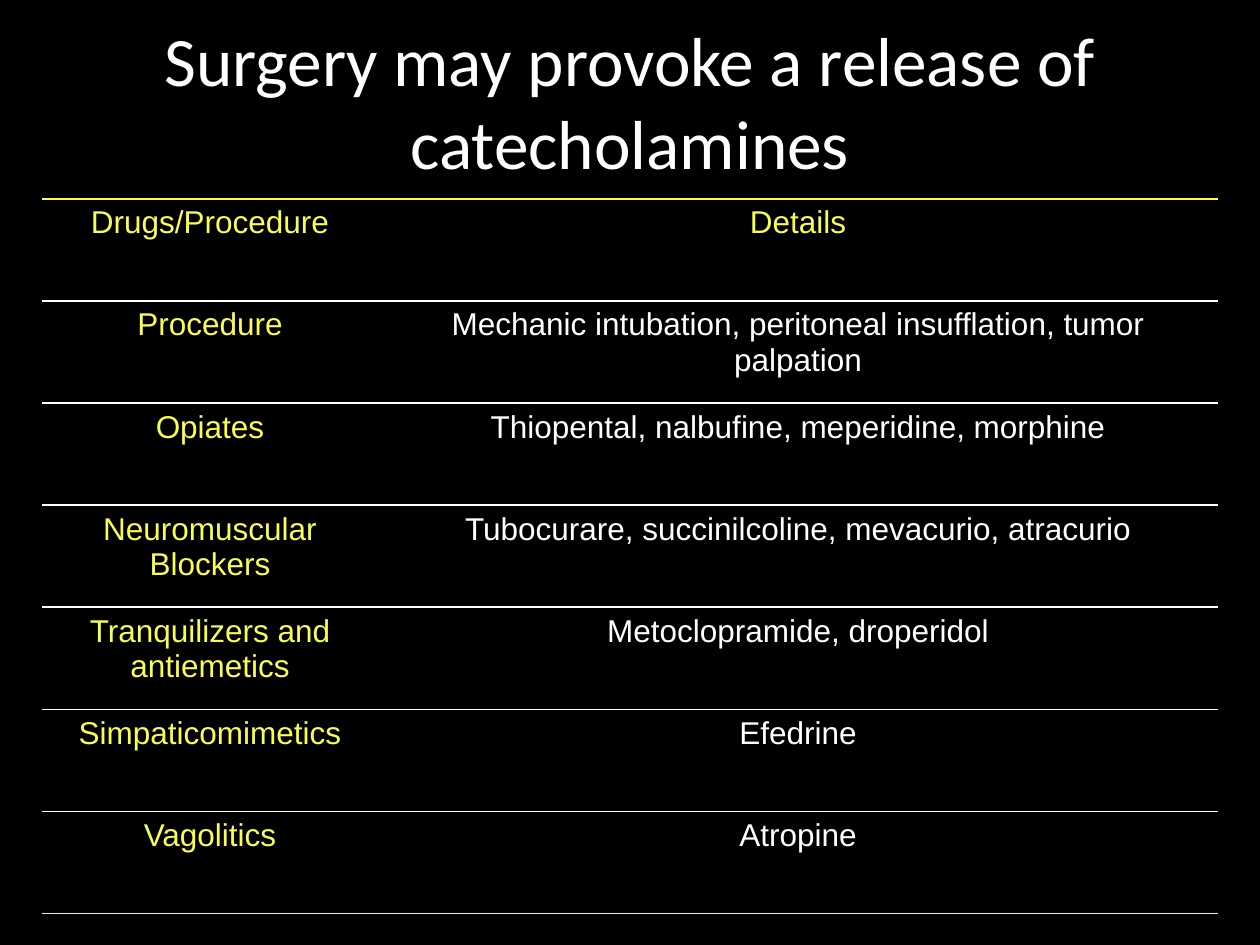
from lxml.etree import SubElement
from pptx import Presentation
from pptx.dml.color import RGBColor
from pptx.enum.text import MSO_ANCHOR, PP_ALIGN
from pptx.oxml import parse_xml
from pptx.oxml.ns import nsdecls, qn
from pptx.util import Inches, Pt

BLACK = RGBColor(0x00, 0x00, 0x00)
WHITE = RGBColor(0xFF, 0xFF, 0xFF)
YELLOW = RGBColor(0xF9, 0xFD, 0x51)

WIDTH, HEIGHT = Inches(10), Inches(7.5)
MARGIN = WIDTH / 30
TABLE_TOP = Inches(1.58)
ROW_HEIGHT = Inches(0.81)
COLUMN_SHARES = (2 / 7, 5 / 7)

ROWS = [
    ("Drugs/Procedure", "Details"),
    ("Procedure", "Mechanic intubation, peritoneal insufflation, tumor palpation"),
    ("Opiates", "Thiopental, nalbufine, meperidine, morphine"),
    ("Neuromuscular Blockers", "Tubocurare, succinilcoline, mevacurio, atracurio"),
    ("Tranquilizers and antiemetics", "Metoclopramide, droperidol"),
    ("Simpaticomimetics", "Efedrine"),
    ("Vagolitics", "Atropine"),
]


def format_paragraph(p, font, size, color):
    p.alignment = PP_ALIGN.CENTER
    p.font.name = font
    p.font.size = Pt(size)
    p.font.color.rgb = color


def add_title(s, text):
    title = s.shapes.title
    title.left, title.top = Inches(0.5), Inches(0.17)
    title.width, title.height = Inches(9), Inches(1.25)
    tf = title.text_frame
    tf.text = text
    tf.word_wrap = True
    tf.vertical_anchor = MSO_ANCHOR.MIDDLE
    format_paragraph(tf.paragraphs[0], "Calibri", 39.6, WHITE)


def set_borders(cell, top, bottom):
    """Rule the cell above and below, and leave its sides open."""
    tcPr = cell._tc.get_or_add_tcPr()
    for side, color in (("L", None), ("R", None), ("T", top), ("B", bottom)):
        ln = SubElement(tcPr, qn(f"a:ln{side}"), w=str(Pt(1)))
        if color is None:
            SubElement(ln, qn("a:noFill"))
        else:
            fill = SubElement(ln, qn("a:solidFill"))
            SubElement(fill, qn("a:srgbClr"), val=str(color))


def fill_cell(cell, text, color):
    cell.text = text
    cell.fill.background()
    p = cell.text_frame.paragraphs[0]
    format_paragraph(p, "Arial", 18, color)
    # Space before as a share of the line height
    spacing = parse_xml(
        f'<a:spcBef {nsdecls("a")}><a:spcPct val="20000"/></a:spcBef>')
    p._p.get_or_add_pPr().insert(0, spacing)


def add_drug_table(s):
    width = WIDTH - 2 * MARGIN
    last = len(ROWS) - 1
    table = s.shapes.add_table(
        len(ROWS), len(COLUMN_SHARES), int(MARGIN), TABLE_TOP,
        int(width), ROW_HEIGHT * len(ROWS)).table
    table.first_row = table.horz_banding = False
    for column, share in zip(table.columns, COLUMN_SHARES):
        column.width = int(width * share)
    for i, texts in enumerate(ROWS):
        table.rows[i].height = ROW_HEIGHT
        for j, text in enumerate(texts):
            cell = table.cell(i, j)
            # Headings are yellow, and so are the outer rules
            fill_cell(cell, text, YELLOW if i == 0 or j == 0 else WHITE)
            set_borders(cell, YELLOW if i == 0 else WHITE,
                        YELLOW if i == last else WHITE)
            # The schema wants the fill after the borders
            tcPr = cell._tc.tcPr
            tcPr.append(tcPr.find(qn("a:noFill")))


def main():
    prs = Presentation()
    prs.slide_width, prs.slide_height = WIDTH, HEIGHT
    s = prs.slides.add_slide(prs.slide_layouts[5])  # title only
    s.background.fill.solid()
    s.background.fill.fore_color.rgb = BLACK
    add_title(s, "Surgery may provoke a release of catecholamines")
    add_drug_table(s)
    prs.save("out.pptx")


if __name__ == "__main__":
    main()
